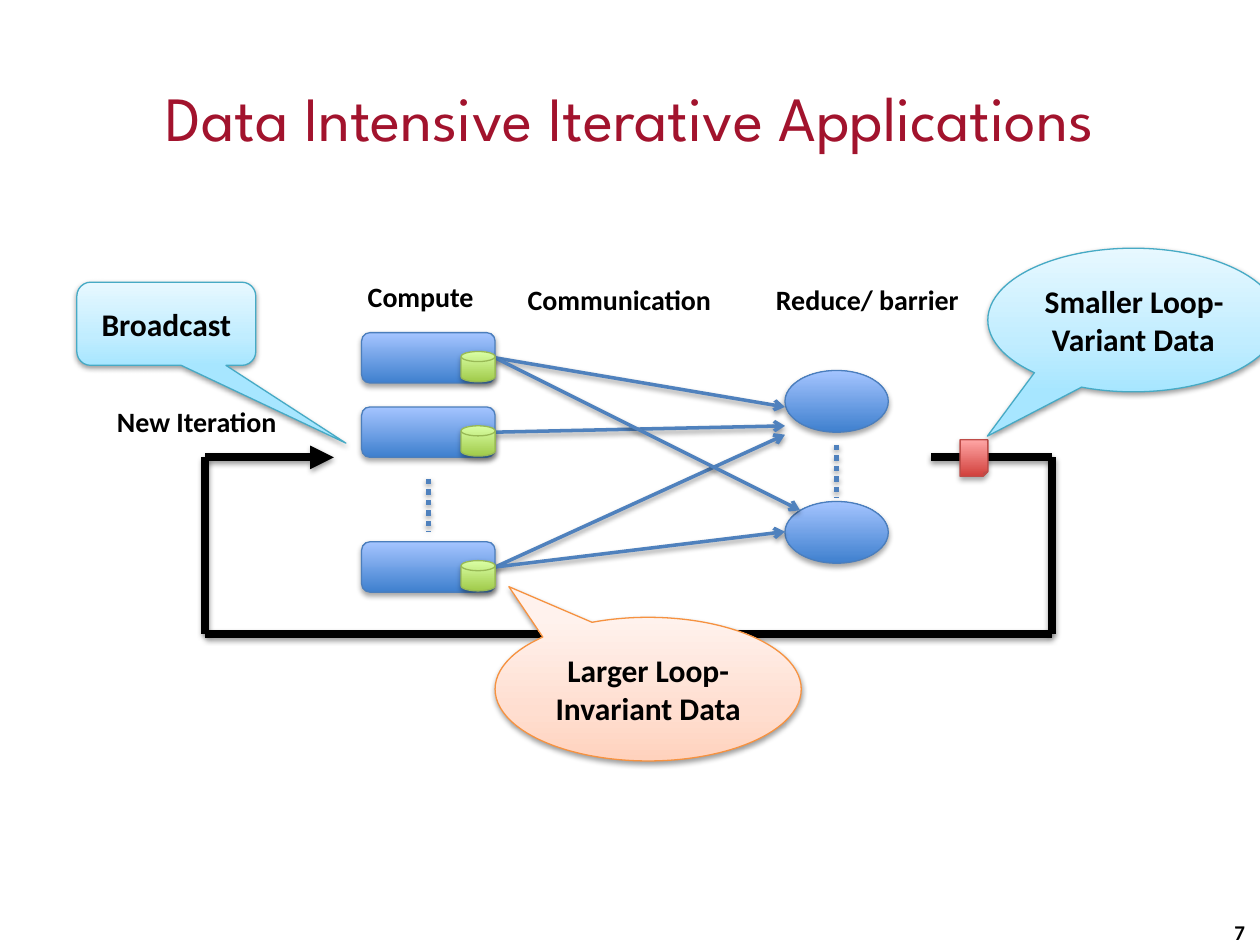
from copy import deepcopy

from lxml import etree
from pptx import Presentation
from pptx.dml.color import RGBColor
from pptx.enum.dml import MSO_LINE
from pptx.enum.shapes import MSO_CONNECTOR, MSO_SHAPE
from pptx.enum.text import MSO_ANCHOR, MSO_AUTO_SIZE, PP_ALIGN
from pptx.oxml.ns import qn
from pptx.util import Inches, Pt

ROUND_RECT = MSO_SHAPE.ROUNDED_RECTANGLE
OVAL = MSO_SHAPE.OVAL
DISK = MSO_SHAPE.FLOWCHART_MAGNETIC_DISK
NOTE = MSO_SHAPE.FOLDED_CORNER
OVAL_CALLOUT = MSO_SHAPE.OVAL_CALLOUT
ROUND_CALLOUT = MSO_SHAPE.ROUNDED_RECTANGULAR_CALLOUT
STRAIGHT = MSO_CONNECTOR.STRAIGHT
DOTTED = MSO_LINE.ROUND_DOT
CENTER, RIGHT = PP_ALIGN.CENTER, PP_ALIGN.RIGHT
MIDDLE = MSO_ANCHOR.MIDDLE
FIT_SHAPE = MSO_AUTO_SIZE.SHAPE_TO_FIT_TEXT
RIGHT_SIDE = 3

CRIMSON = RGBColor(0xA2, 0x13, 0x2D)
BLACK = RGBColor(0x00, 0x00, 0x00)
ARROW_BLUE = RGBColor(0x4F, 0x81, 0xBD)

# Each style: outline, then fill colours from bottom to top
BLUE = (RGBColor(0x4B, 0x7E, 0xBC),
        RGBColor(0x3F, 0x80, 0xCE), RGBColor(0xA4, 0xC4, 0xFF))
GREEN = (RGBColor(0x98, 0xB9, 0x55),
         RGBColor(0xA0, 0xCA, 0x4A), RGBColor(0xDA, 0xFF, 0xA5))
RED = (RGBColor(0xBF, 0x4C, 0x48),
       RGBColor(0xD1, 0x40, 0x3C), RGBColor(0xFF, 0xA6, 0xA5))
ORANGE = (RGBColor(0xF6, 0x92, 0x40), RGBColor(0xFF, 0xD2, 0xBD),
          RGBColor(0xFF, 0xDE, 0xD0), RGBColor(0xFF, 0xF2, 0xED))
AQUA = (RGBColor(0x46, 0xAA, 0xC5), RGBColor(0xA7, 0xE6, 0xFF),
        RGBColor(0xC1, 0xED, 0xFF), RGBColor(0xE7, 0xF8, 0xFF))


def add_shadow(sp, alpha=38, distance=1.6):
    """Soft black shadow falling straight down."""
    sp_pr = sp._element.spPr
    for old in sp_pr.findall(qn("a:effectLst")):
        sp_pr.remove(old)
    effects = etree.SubElement(sp_pr, qn("a:effectLst"))
    shadow = etree.SubElement(
        effects, qn("a:outerShdw"), blurRad=str(Pt(3.1)),
        dist=str(Pt(distance)), dir="5400000", rotWithShape="0")
    color = etree.SubElement(shadow, qn("a:srgbClr"), val="000000")
    etree.SubElement(color, qn("a:alpha"), val=str(alpha * 1000))


def fill_gradient(sp, colors):
    """Vertical gradient; a middle colour sits at 35 %."""
    sp.fill.gradient()
    sp.fill.gradient_angle = 90
    if len(colors) == 3:
        first = sp._element.spPr.find(".//" + qn("a:gs"))
        first.addnext(deepcopy(first))
    places = (0, 0.35, 1) if len(colors) == 3 else (0, 1)
    for stop, color, place in zip(sp.fill.gradient_stops, colors, places):
        stop.color.rgb = color
        stop.position = place


def set_text(sp, text, size, color=BLACK, font="Calibri", bold=True,
             align=None):
    p = sp.text_frame.paragraphs[0]
    p.text = text
    p.alignment = align
    r = p.runs[0]
    r.font.name, r.font.size, r.font.bold = font, Pt(size), bold
    r.font.color.rgb = color


def add_node(s, kind, left, top, width, height, style):
    sp = s.shapes.add_shape(kind, Inches(left), Inches(top),
                            Inches(width), Inches(height))
    outline, *colors = style
    fill_gradient(sp, colors)
    sp.line.color.rgb = outline
    sp.line.width = Pt(0.75)
    add_shadow(sp, 35, 1.8)
    return sp


def add_callout(s, kind, box, style, text, adjustments):
    sp = add_node(s, kind, *box, style)
    add_shadow(sp)
    for i, value in enumerate(adjustments):
        sp.adjustments[i] = value
    sp.text_frame.word_wrap = True
    sp.text_frame.vertical_anchor = MIDDLE
    set_text(sp, text, 18, align=CENTER)


def add_line(s, start, end, color, width, head=None, dash=None, source=None):
    line = s.shapes.add_connector(STRAIGHT, *map(Inches, start + end))
    if source is not None:
        line.begin_connect(source, RIGHT_SIDE)
    line.line.color.rgb = color
    line.line.width = Pt(width)
    if dash:
        line.line.dash_style = dash
    if head:
        etree.SubElement(line.line._get_or_add_ln(), qn("a:tailEnd"),
                         type=head)
    add_shadow(line)


def add_label(s, left, top, width, text):
    sp = s.shapes.add_textbox(Inches(left), Inches(top),
                              Inches(width), Inches(0.43))
    sp.text_frame.word_wrap = False
    sp.text_frame.auto_size = FIT_SHAPE
    set_text(sp, text, 16)


def add_title(s, text):
    sp = s.shapes.title
    sp.left, sp.top = Inches(0.5), Inches(0.3)
    sp.width, sp.height = Inches(9), Inches(1.25)
    sp.text_frame.vertical_anchor = MIDDLE
    set_text(sp, text, 36, CRIMSON, "League Spartan", False, CENTER)


def add_page_number(s, number):
    sp = s.shapes.add_textbox(Inches(7.65), Inches(7.2),
                              Inches(2.33), Inches(0.4))
    sp.text_frame.word_wrap = True
    sp.text_frame.vertical_anchor = MIDDLE
    set_text(sp, number, 12, align=RIGHT)


def main():
    prs = Presentation()
    prs.slide_width, prs.slide_height = Inches(10), Inches(7.5)
    s = prs.slides.add_slide(prs.slide_layouts[5])
    add_title(s, "Data Intensive Iterative Applications")

    # Compute tasks and reducers
    task_tops = (2.64, 3.23, 4.3)
    tasks = [add_node(s, ROUND_RECT, 2.87, top, 1.06, 0.4, BLUE)
             for top in task_tops]
    for top in (2.94, 3.98):
        add_node(s, OVAL, 6.23, top, 0.82, 0.49, BLUE)

    # Dotted lines for the tasks and reducers left out
    for x, top in ((3.4, 3.8), (6.64, 3.53)):
        add_line(s, (x, top), (x, top + 0.42), ARROW_BLUE, 3, dash=DOTTED)

    # Communication arrows
    for i, end in ((0, (6.23, 3.23)), (1, (6.23, 3.38)), (2, (6.23, 3.45)),
                   (0, (6.35, 4.05)), (2, (6.23, 4.22))):
        add_line(s, (3.93, task_tops[i] + 0.2), end, ARROW_BLUE, 2,
                 head="arrow", source=tasks[i])

    # Loop back to a new iteration
    loop = [(7.39, 3.63), (8.35, 3.63), (8.35, 5.03),
            (1.63, 5.03), (1.63, 3.63), (2.65, 3.63)]
    for start, end in zip(loop, loop[1:]):
        add_line(s, start, end, BLACK, 4.5,
                 head="triangle" if end == loop[-1] else None)

    # Stage labels
    add_label(s, 2.82, 2.17, 1.15, "Compute")
    add_label(s, 4.09, 2.19, 1.83, "Communication")
    add_label(s, 6.06, 2.19, 1.82, "Reduce/ barrier")
    add_label(s, 0.83, 3.16, 1.61, "New Iteration")

    # Data held by the tasks and carried by the loop
    for top in task_tops:
        add_node(s, DISK, 3.66, top + 0.15, 0.27, 0.24, GREEN)
    add_node(s, NOTE, 7.62, 3.49, 0.22, 0.29, RED)

    # Callouts
    add_callout(s, OVAL_CALLOUT, (3.93, 4.9, 2.43, 1.14), ORANGE,
                "Larger Loop-Invariant Data", (-0.455, -0.714))
    add_callout(s, OVAL_CALLOUT, (7.84, 1.97, 2.31, 1.14), AQUA,
                "Smaller Loop-Variant Data", (-0.502, 0.809))
    add_callout(s, ROUND_CALLOUT, (0.61, 2.24, 1.42, 0.66), AQUA,
                "Broadcast", (1.004, 1.436, 0.167))

    add_page_number(s, "7")
    prs.save("out.pptx")


if __name__ == "__main__":
    main()
